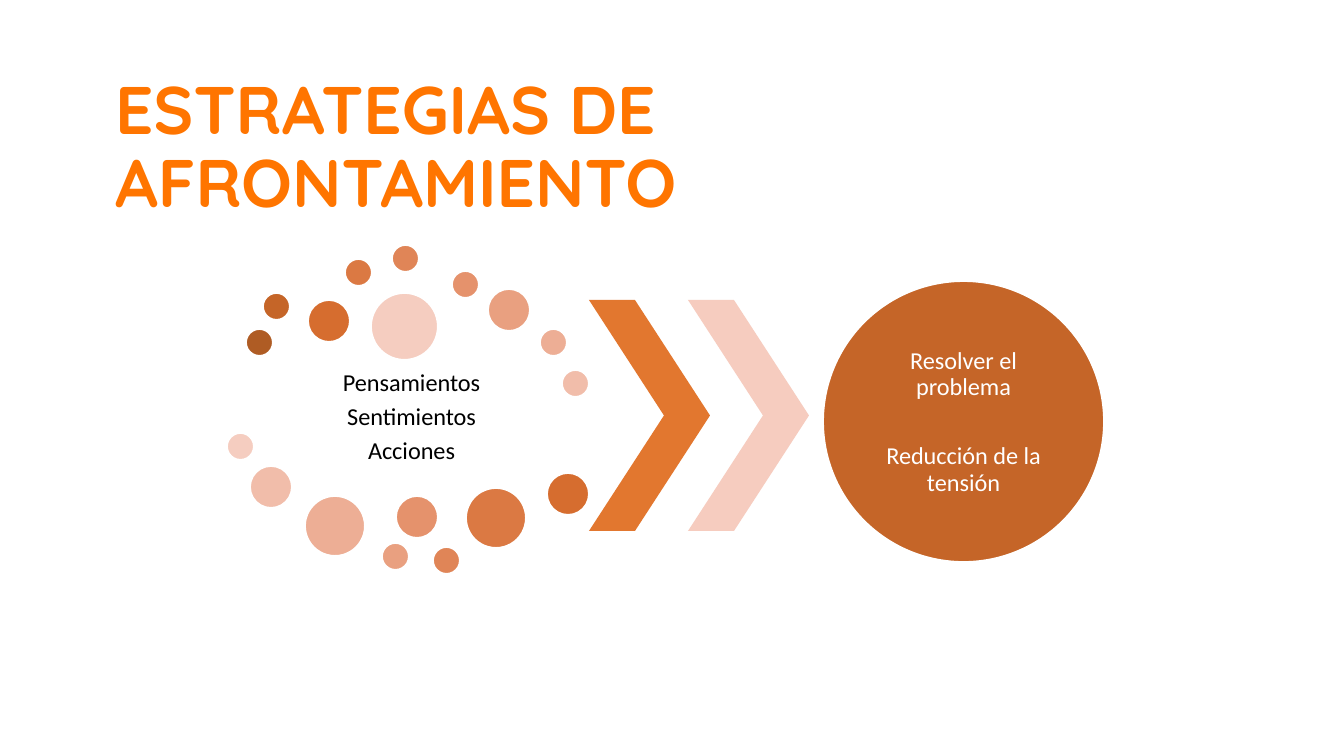
"""Builds the coping strategies slide: scattered dots, two chevrons and a result circle."""
from dataclasses import dataclass

from pptx import Presentation
from pptx import util as u
from pptx.dml.color import RGBColor
from pptx.enum import shapes, text
from pptx.oxml.ns import qn

PX = 914400 / 134.4
SHADES = ["AF5C24", "C56528", "D66D2F", "DB7943", "E08557",
          "E5926C", "E9A080", "EDAE95", "F1BDAA", "F5CDC0"]


@dataclass
class Box:
    """A rectangle in px."""
    x: int
    y: int
    w: int
    h: int

    def emu(self) -> list[u.Emu]:
        """Return left, top, width and height in EMU."""
        return [px(n) for n in (self.x, self.y, self.w, self.h)]


@dataclass
class Dot:
    """A circle given by its corner and diameter in px."""
    x: int
    y: int
    d: int


UPPER_DOTS = [
    Dot(246, 329, 27), Dot(263, 293, 27), Dot(308, 300, 42), Dot(345, 259, 27),
    Dot(392, 245, 27), Dot(452, 271, 27), Dot(488, 289, 42), Dot(540, 329, 27),
    Dot(562, 370, 27), Dot(371, 293, 67),
]
LOWER_DOTS = [
    Dot(227, 433, 27), Dot(250, 466, 42), Dot(305, 496, 60), Dot(382, 543, 27),
    Dot(396, 496, 42), Dot(433, 547, 27), Dot(466, 488, 60), Dot(547, 473, 42),
]


def px(n: int) -> u.Emu:
    """Turn px into EMU."""
    return u.Emu(round(n * PX))


def rgb(value: str) -> RGBColor:
    """Turn a hex string into a colour."""
    return RGBColor.from_string(value)


def place(sp, box: Box) -> None:
    """Move and size a shape."""
    sp.left, sp.top, sp.width, sp.height = box.emu()


def write(sp, lines: list[str], *, font: str, size: int, color: str, bold=False,
          align=text.PP_ALIGN.CENTER, anchor=text.MSO_ANCHOR.MIDDLE,
          leading=0.9, gap=0.0, insets=(0, 0, 0, 0)) -> None:
    """Fill a shape with one formatted paragraph per line."""
    tf = sp.text_frame
    tf.word_wrap, tf.auto_size = True, text.MSO_AUTO_SIZE.NONE
    tf.vertical_anchor = anchor
    tf.margin_left, tf.margin_top, tf.margin_right, tf.margin_bottom = map(px, insets)
    for i, line in enumerate(lines):
        p = tf.paragraphs[0] if i == 0 else tf.add_paragraph()
        p.alignment, p.line_spacing = align, leading
        p.space_before, p.space_after = u.Pt(gap if i else 0), u.Pt(0)
        pPr = p._p.get_or_add_pPr()
        pPr.set("marL", "0")
        pPr.set("indent", "0")
        pPr.append(pPr.makeelement(qn("a:buNone"), {}))
        r = p.add_run()
        r.text = line
        r.font.name, r.font.size, r.font.bold = font, u.Pt(size), bold
        r.font.color.rgb = rgb(color)


def add_shape(s, kind: shapes.MSO_SHAPE, box: Box, fill: str, line: str | None = None):
    """Draw a filled preset shape with an optional outline."""
    sp = s.shapes.add_shape(kind, *box.emu())
    sp.shadow.inherit = False
    sp.fill.solid()
    sp.fill.fore_color.rgb = rgb(fill)
    if line:
        sp.line.color.rgb = rgb(line)
        sp.line.width = u.Pt(1)
    else:
        sp.line.fill.background()
    return sp


def add_dot(s, dot: Dot, fill: str) -> None:
    """Draw a white-edged circle."""
    add_shape(s, shapes.MSO_SHAPE.OVAL, Box(dot.x, dot.y, dot.d, dot.d), fill, "FFFFFF")


def main() -> None:
    """Build and save the slide."""
    prs = Presentation()
    prs.slide_width, prs.slide_height = px(1344), px(756)
    s = prs.slides.add_slide(prs.slide_layouts[1])
    title, body = s.placeholders

    place(title, Box(102, 67, 1141, 87))
    write(title, ["ESTRATEGIAS DE AFRONTAMIENTO"], font="Quicksand", size=36,
          color="FF7500", bold=True, align=text.PP_ALIGN.LEFT,
          anchor=text.MSO_ANCHOR.TOP, leading=u.Pt(39.4), insets=(13, 7, 80, 7))

    place(body, Box(246, 363, 331, 109))
    write(body, ["Pensamientos", "Sentimientos", "Acciones"], font="Calibri",
          size=13, color="000000", gap=4.2, insets=(2, 2, 2, 2))

    for dots, shades in ((UPPER_DOTS, SHADES), (LOWER_DOTS, SHADES[::-1])):
        for dot, shade in zip(dots, shades):
            add_dot(s, dot, shade)

    for x, fill in ((589, "E2772F"), (688, "F6CCBF")):
        sp = add_shape(s, shapes.MSO_SHAPE.CHEVRON, Box(x, 300, 121, 231), fill)
        sp.adjustments[0] = 0.62

    add_dot(s, Dot(823, 281, 281), "C56528")
    result = s.shapes.add_textbox(*Box(864, 323, 199, 199).emu())
    write(result, ["Resolver el problema", "Reducción de la tensión"], font="Calibri",
          size=13, color="FFFFFF", gap=23)

    prs.save("out.pptx")


if __name__ == "__main__":
    main()
